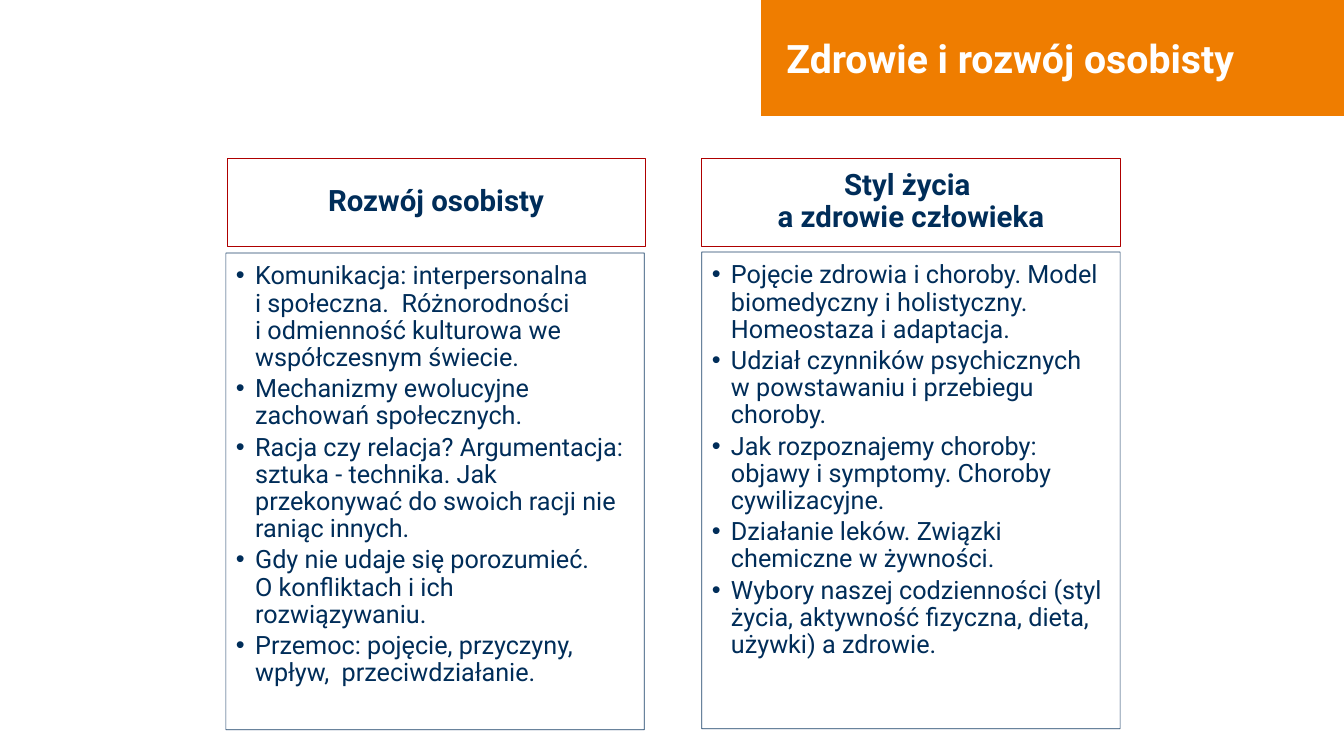
from copy import deepcopy

from lxml.etree import SubElement
from pptx import Presentation
from pptx.dml.color import RGBColor
from pptx.enum.text import MSO_ANCHOR, MSO_AUTO_SIZE, PP_ALIGN
from pptx.oxml.ns import qn
from pptx.util import Pt

PX = 9144  # 100 px to the inch
ORANGE = RGBColor(0xEF, 0x7D, 0x00)
WHITE = RGBColor(0xFF, 0xFF, 0xFF)
RED = RGBColor(0xAE, 0x00, 0x00)
NAVY = RGBColor(0x00, 0x2D, 0x59)


def put(box, spot, lines, fill=WHITE, edge=NAVY, width=0.5, alpha=None,
        pads=(10, 5, 10, 5), anchor=MSO_ANCHOR.MIDDLE, align=PP_ALIGN.LEFT,
        size=18, color=NAVY, bold=False, left=0, bullet=False,
        lead=0.9, after=0):
    """Place a placeholder, paint it and fill it with paragraphs."""
    box.left, box.top, box.width, box.height = [n * PX for n in spot]
    box.fill.solid()
    box.fill.fore_color.rgb = fill
    box.line.color.rgb = edge
    box.line.width = Pt(width)
    if alpha:
        for tone in box._element.spPr.iter(qn("a:srgbClr")):
            SubElement(tone, qn("a:alpha"), val=str(alpha * 1000))

    frame = box.text_frame
    frame.word_wrap = True
    frame.auto_size = MSO_AUTO_SIZE.NONE
    frame.vertical_anchor = anchor
    (frame.margin_left, frame.margin_top,
     frame.margin_right, frame.margin_bottom) = [n * PX for n in pads]

    for i, line in enumerate(lines):
        para = frame.paragraphs[0] if i == 0 else frame.add_paragraph()
        para.text = line
        props = para._p.get_or_add_pPr()
        props.set("marL", str(left * PX))
        props.set("indent", str(-left * PX if bullet else 0))
        if bullet:
            SubElement(props, qn("a:buFont"), typeface="Arial")
            SubElement(props, qn("a:buChar"), char="•")
        para.alignment = align
        para.line_spacing = lead
        para.space_before = Pt(0)
        para.space_after = Pt(after)
        for run in para.runs:
            run.font.name = "Roboto"
            run.font.size = Pt(size)
            run.font.bold = bold
            run.font.color.rgb = color
        for gap in para._p.findall(qn("a:br")):
            gap.append(deepcopy(para.runs[0]._r.rPr))


deck = Presentation()
deck.slide_width = 1333 * PX
deck.slide_height = 750 * PX
slide = deck.slides.add_slide(deck.slide_layouts.get_by_name("Comparison"))
slots = {box.placeholder_format.idx: box for box in slide.placeholders}

put(slots[0], (755, 0, 579, 115), ["Zdrowie i rozwój osobisty"],
    fill=ORANGE, edge=ORANGE, width=0.75, align=PP_ALIGN.JUSTIFY,
    size=28, color=WHITE, bold=True, left=15, lead=1.0)

# header x, list x, list y, header, list items
columns = [
    (225, 224, 251, "Rozwój osobisty", [
        "Komunikacja: interpersonalna \ni społeczna.  Różnorodności \n"
        "i odmienność kulturowa we współczesnym świecie.",
        "Mechanizmy ewolucyjne zachowań społecznych.",
        "Racja czy relacja? Argumentacja: sztuka - technika. "
        "Jak przekonywać do swoich racji nie raniąc innych.",
        "Gdy nie udaje się porozumieć. \nO konfliktach i ich rozwiązywaniu.",
        "Przemoc: pojęcie, przyczyny, wpływ,  przeciwdziałanie.",
    ]),
    (696, 696, 250, "Styl życia \na zdrowie człowieka", [
        "Pojęcie zdrowia i choroby. Model biomedyczny i holistyczny. "
        "Homeostaza i adaptacja.",
        "Udział czynników psychicznych w powstawaniu i przebiegu choroby.",
        "Jak rozpoznajemy choroby: objawy i symptomy. "
        "Choroby cywilizacyjne.",
        "Działanie leków. Związki chemiczne w żywności.",
        "Wybory naszej codzienności (styl życia, aktywność fizyczna, "
        "dieta, używki) a zdrowie.",
    ]),
]

for i, (head_x, list_x, list_y, head, items) in enumerate(columns):
    put(slots[1 + 2 * i], (head_x, 157, 415, 87), [head], edge=RED,
        pads=(16, 9, 16, 9), align=PP_ALIGN.CENTER, size=21, bold=True)
    put(slots[2 + 2 * i], (list_x, list_y, 415, 473), items, alpha=90,
        pads=(10, 10, 14, 16), anchor=MSO_ANCHOR.TOP, left=19,
        bullet=True, after=2.8)

deck.save("out.pptx")
